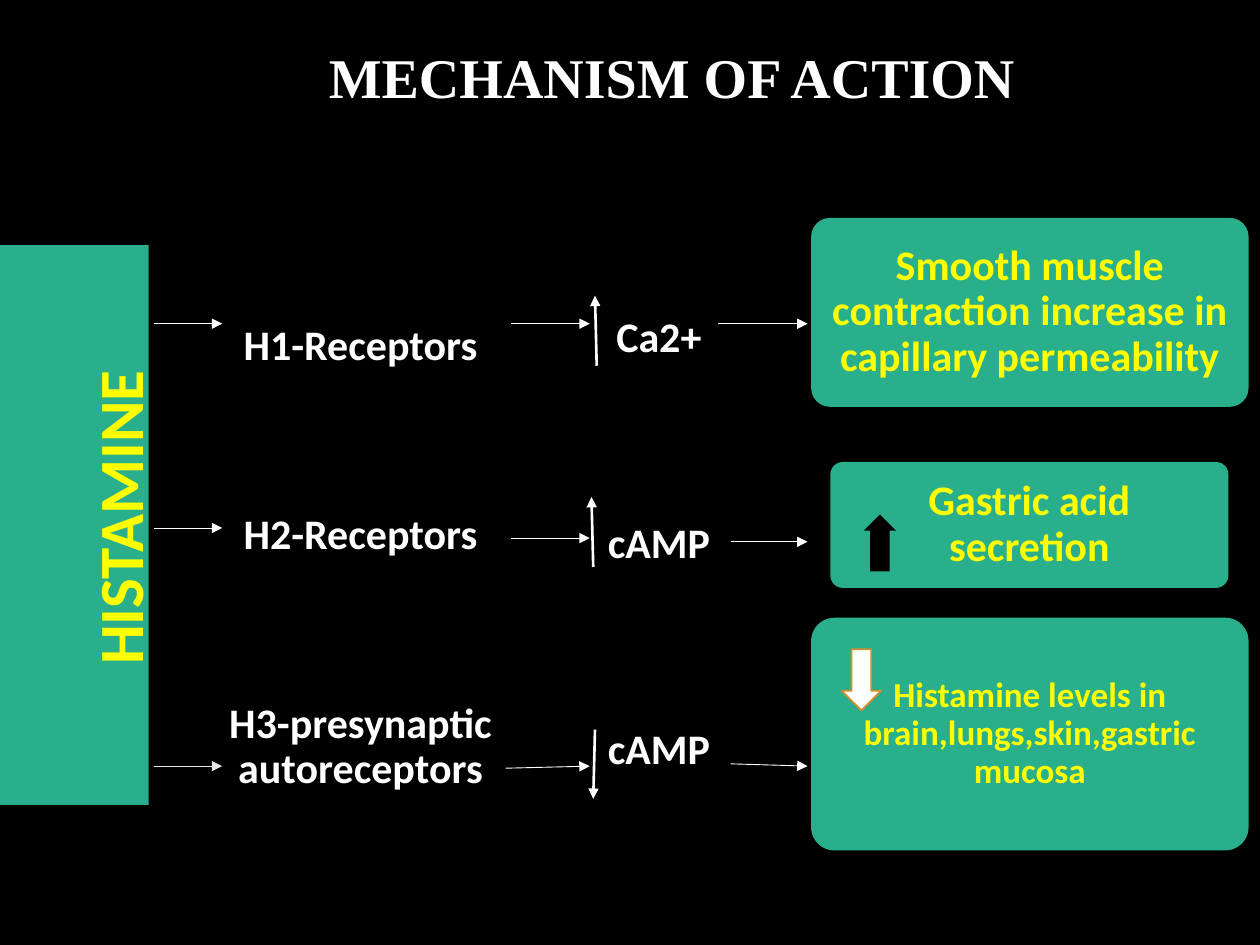
import dataclasses

import pptx
import pptx.dml.color
import pptx.enum.shapes
import pptx.enum.text
import pptx.oxml
import pptx.oxml.ns
import pptx.util

Pt = pptx.util.Pt
ShapeKind = pptx.enum.shapes.MSO_SHAPE
Align = pptx.enum.text.PP_ALIGN


@dataclasses.dataclass(frozen=True)
class Theme:
    background: str = "000000"
    panel: str = "29AF8C"
    accent: str = "FFFF00"
    light: str = "FFFFFF"
    soft: str = "E7E6E6"
    outline: str = "D58C2E"
    title_font: str = "Times New Roman"
    body_font: str = "Calibri"
    title_size: float = 32
    banner_size: float = 36
    body_size: float = 24
    small_size: float = 20
    thin: float = 0.5
    thick: float = 1.5


class SlideBuilder:
    def __init__(self, slide, theme):
        self.slide = slide
        self.theme = theme
        self.paint(slide.background.fill, theme.background)

    def paint(self, fill, color):
        fill.solid()
        fill.fore_color.rgb = pptx.dml.color.RGBColor.from_string(color)

    def set_text(self, shape, texts, size, color, font=None, align=Align.CENTER,
                 line_spacing=0.9, gap=0, margins=(7.2, 3.6, 7.2, 3.6)):
        frame = shape.text_frame
        frame.word_wrap = True
        frame.auto_size = pptx.enum.text.MSO_AUTO_SIZE.NONE
        frame.vertical_anchor = pptx.enum.text.MSO_ANCHOR.MIDDLE
        (frame.margin_left, frame.margin_top,
         frame.margin_right, frame.margin_bottom) = map(Pt, margins)
        for index, text in enumerate(texts):
            paragraph = frame.add_paragraph() if index else frame.paragraphs[0]
            paragraph.alignment = align
            paragraph.line_spacing = line_spacing
            paragraph.space_before = Pt(gap if index else 0)
            run = paragraph.add_run()
            run.text = text
            run.font.name = font or self.theme.body_font
            run.font.size = Pt(size)
            run.font.bold = True
            run.font.color.rgb = pptx.dml.color.RGBColor.from_string(color)

    def title(self, box, text):
        shape = self.slide.shapes.title
        shape.left, shape.top, shape.width, shape.height = map(Pt, box)
        self.set_text(shape, [text], self.theme.title_size, self.theme.light,
                      font=self.theme.title_font)

    def text(self, box, texts, size, color, rotation=0, **style):
        shape = self.slide.shapes.add_textbox(*map(Pt, box))
        shape.rotation = rotation
        self.set_text(shape, texts, size, color, **style)

    def block(self, kind, box, fill, outline=None, adjustments=()):
        shape = self.slide.shapes.add_shape(kind, *map(Pt, box))
        shape.shadow.inherit = False
        self.paint(shape.fill, fill)
        if outline:
            self.paint(shape.line.fill, outline)
            shape.line.width = Pt(1)
        else:
            shape.line.fill.background()
        for index, value in enumerate(adjustments):
            shape.adjustments[index] = value
        return shape

    def card(self, box, text, size):
        shape = self.block(ShapeKind.ROUNDED_RECTANGLE, box, self.theme.panel,
                           adjustments=[0.1])
        self.set_text(shape, [text], size, self.theme.accent, margins=[7] * 4)

    def arrow(self, start, end, width, color):
        connector = self.slide.shapes.add_connector(
            pptx.enum.shapes.MSO_CONNECTOR.STRAIGHT, *map(Pt, start + end))
        self.paint(connector.line.fill, color)
        connector.line.width = Pt(width)
        namespace = pptx.oxml.ns.nsdecls("a")
        properties = connector._element.spPr
        properties.find(pptx.oxml.ns.qn("a:ln")).append(
            pptx.oxml.parse_xml(f'<a:tailEnd {namespace} type="triangle"/>'))
        properties.append(pptx.oxml.parse_xml(f"<a:effectLst {namespace}/>"))


def main():
    theme = Theme()
    presentation = pptx.Presentation()
    presentation.slide_width = Pt(720)
    presentation.slide_height = Pt(540)
    slide = presentation.slides.add_slide(presentation.slide_layouts[5])
    builder = SlideBuilder(slide, theme)

    builder.title((88, 11.5, 592, 69), "MECHANISM OF ACTION")
    builder.text((119.5, 144, 173, 350),
                 ["H1-Receptors", "H2-Receptors", "H3-presynaptic autoreceptors"],
                 theme.body_size, theme.light, gap=82)
    builder.block(ShapeKind.RECTANGLE, (0, 140, 85, 320), theme.panel)
    builder.text((-53.3, 254, 251.3, 22.5), ["HISTAMINE"], theme.banner_size,
                 theme.accent, rotation=270, align=Align.LEFT,
                 margins=(11, 0, 16.5, 3.6))
    builder.text((335.5, 123, 82, 373), ["Ca2+", "cAMP", "cAMP"],
                 theme.body_size, theme.light, line_spacing=1, gap=89)

    cards = [
        ((463.5, 124.5, 250, 108),
         "Smooth muscle contraction increase in capillary permeability",
         theme.body_size),
        ((474.5, 264, 227.5, 72), "Gastric acid secretion", theme.body_size),
        ((463.5, 353, 250, 133),
         "Histamine levels in brain,lungs,skin,gastric mucosa",
         theme.small_size),
    ]
    for box, text, size in cards:
        builder.card(box, text, size)
    builder.block(ShapeKind.UP_ARROW, (493.5, 294, 18.5, 32.5),
                  theme.background, adjustments=[0.6, 0.5])
    builder.block(ShapeKind.DOWN_ARROW, (481, 371, 22.5, 35),
                  theme.light, theme.outline)

    flow_arrows = [
        ((88, 185), (127, 185), theme.light),
        ((88, 301.7), (127, 301.7), theme.light),
        ((88, 437.8), (127, 437.8), theme.soft),
        ((292, 185), (337, 185), theme.light),
        ((292, 307.5), (337, 307.5), theme.light),
        ((289, 439), (337, 437.8), theme.light),
        ((410.5, 185), (461.5, 185), theme.light),
        ((417.5, 309.6), (461.5, 309.6), theme.light),
        ((417.5, 436.5), (461.5, 437.8), theme.light),
    ]
    for start, end, color in flow_arrows:
        builder.arrow(start, end, theme.thin, color)

    level_arrows = [
        ((341, 209), (340, 169)),
        ((339, 324), (338, 284)),
        ((340, 417), (339, 456.5)),
    ]
    for start, end in level_arrows:
        builder.arrow(start, end, theme.thick, theme.light)

    presentation.save("out.pptx")


if __name__ == "__main__":
    main()
